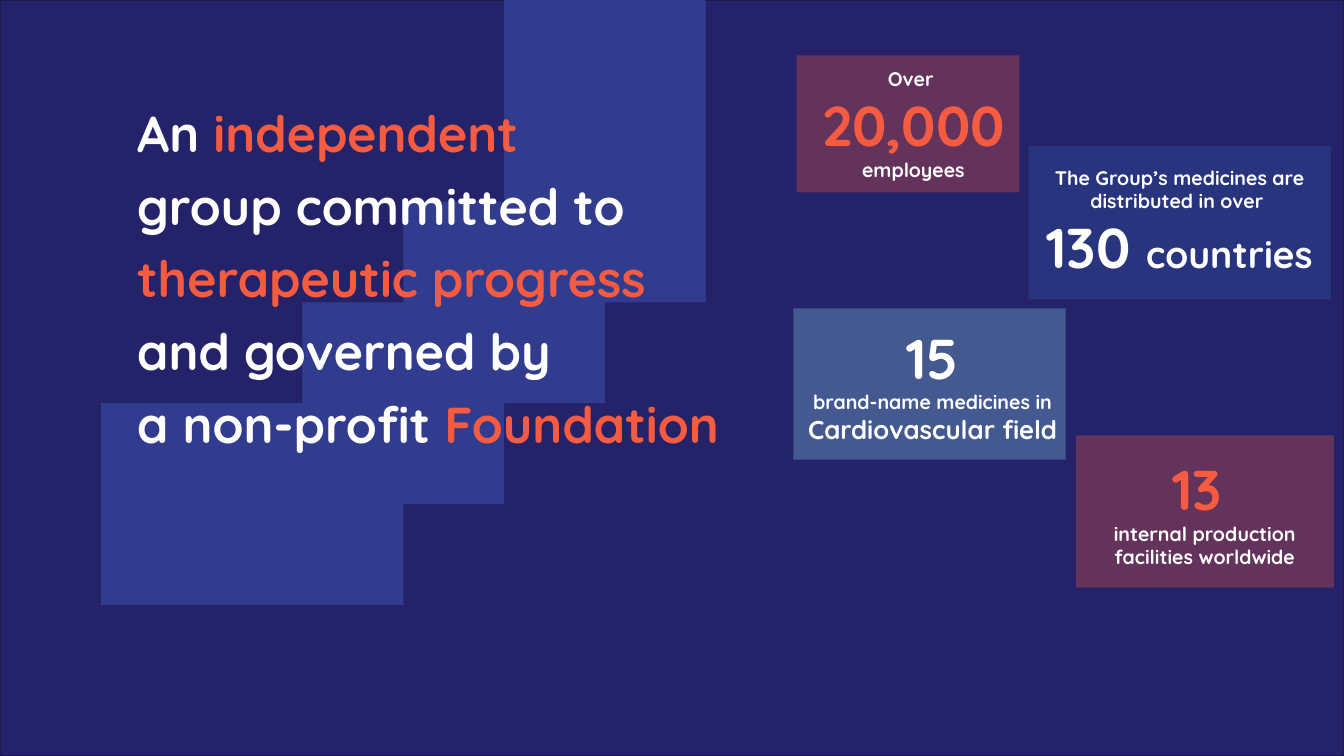
from copy import deepcopy

from lxml.etree import SubElement
from pptx import Presentation
from pptx.dml.color import RGBColor
from pptx.enum.shapes import MSO_SHAPE as Preset
from pptx.enum.text import MSO_ANCHOR as Anchor, MSO_AUTO_SIZE as AutoSize, PP_ALIGN as Align
from pptx.oxml.ns import qn
from pptx.util import Inches, Pt

COLORS = {
    "navy": "242269", "edge": "1B194E", "arc": "323C8E", "white": "FFFFFF",
    "coral": "F55B41", "blue": "345FAF", "cyan": "91D9E8",
}


def bezier(start, control_a, control_b, end, steps=48):
    """Points along a cubic curve, without its start."""
    points = []
    for step in range(1, steps + 1):
        t = step / steps
        weights = ((1 - t) ** 3, 3 * t * (1 - t) ** 2, 3 * t * t * (1 - t), t ** 3)
        corners = list(zip(start, control_a, control_b, end))
        points.append(tuple(sum(w * c for w, c in zip(weights, axis)) for axis in corners))
    return points


class SlideBuilder:
    font = {"name": "Quicksand", "bold": True}

    def __init__(self, presentation):
        self.slide = presentation.slides.add_slide(presentation.slide_layouts[6])
        fill = self.slide.background.fill
        fill.solid()
        fill.fore_color.rgb = self.color("navy")

    def color(self, name):
        return RGBColor.from_string(COLORS[name])

    def paint(self, shape, fill, alpha=None, line=None):
        shape.shadow.inherit = False
        shape.fill.solid()
        shape.fill.fore_color.rgb = self.color(fill)
        if alpha:
            color = shape._element.spPr.find(qn("a:solidFill"))[0]
            SubElement(color, qn("a:alpha")).set("val", str(alpha * 1000))
        if line:
            shape.line.color.rgb = self.color(line)
            shape.line.width = Pt(1)
        else:
            shape.line.fill.background()

    def rectangle(self, box, fill, **style):
        shape = self.slide.shapes.add_shape(Preset.RECTANGLE, *map(Inches, box))
        self.paint(shape, fill, **style)

    def outline(self, points, fill):
        builder = self.slide.shapes.build_freeform(*points[0], scale=Inches(1))
        builder.add_line_segments(points[1:], close=True)
        self.paint(builder.convert_to_shape(), fill)

    def text(self, box, paragraphs, margins=(0, 0), line_spacing=None,
             align=Align.CENTER, **frame_format):
        """Each paragraph is a list of (text, size, color) runs."""
        frame = self.slide.shapes.add_textbox(*map(Inches, box)).text_frame
        side, end = map(Inches, margins)
        values = {
            "word_wrap": True, "margin_left": side, "margin_right": side,
            "margin_top": end, "margin_bottom": end, **frame_format,
        }
        for name, value in values.items():
            setattr(frame, name, value)
        for index, runs in enumerate(paragraphs):
            paragraph = frame.add_paragraph() if index else frame.paragraphs[0]
            paragraph.alignment = align
            paragraph.line_spacing = line_spacing
            for run in runs:
                self.add_run(paragraph, *run)

    def add_run(self, paragraph, text, size, color):
        for index, part in enumerate(text.split("\n")):
            if index:
                # The break keeps the format of the run before it
                paragraph.add_line_break()
                paragraph._p[-1].append(deepcopy(run._r.rPr))
            if part:
                run = paragraph.add_run()
                run.text = part
                for name, value in {**self.font, "size": Pt(size)}.items():
                    setattr(run.font, name, value)
                run.font.color.rgb = self.color(color)

    def card(self, box, fill, text_box, paragraphs, **text_format):
        self.rectangle(box, fill, alpha=30)
        values = {"vertical_anchor": Anchor.MIDDLE, **text_format}
        self.text(text_box, paragraphs, auto_size=AutoSize.SHAPE_TO_FIT_TEXT, **values)


def main():
    presentation = Presentation()
    presentation.slide_width, presentation.slide_height = Inches(13.33), Inches(7.5)
    builder = SlideBuilder(presentation)

    # Background and arc
    builder.rectangle((0, 0, 13.33, 7.5), "navy", line="edge")
    outer = [(7.35, 0.06), (7.35, 3.33), (4.7, 5.97), (1.44, 5.97)]
    inner = [(1.44, 3.83), (3.52, 3.83), (5.21, 2.14), (5.21, 0.06)]
    builder.outline(
        [(5.2, 0), (7.35, 0), outer[0], *bezier(*outer),
         (1.34, 5.97), (1.34, 3.83), inner[0], *bezier(*inner)], "arc")

    # Headline
    headline = [
        ("An ", "white"), ("independent\n", "coral"),
        ("group committed to ", "white"), ("therapeutic progress \n", "coral"),
        ("and governed by \na non-profit ", "white"), ("Foundation", "coral"),
    ]
    builder.text((1.36, 0.89, 6.89, 3.79), [[(text, 36, color) for text, color in headline]],
                 line_spacing=Pt(52), align=Align.LEFT, vertical_anchor=Anchor.TOP)

    # Key figures
    builder.card((7.9, 0.55, 2.21, 1.36), "coral", (7.86, 0.66, 2.4, 1.14), [
        [("Over \n", 14, "white"), ("20,000\n", 40, "coral"), ("employees", 14, "white")]])
    builder.card((10.2, 1.45, 3, 1.52), "blue", (10.29, 1.64, 2.82, 1.14), [
        [("The Group’s medicines are distributed in over \n", 14, "white"),
         ("130 ", 40, "white"), ("countries", 26.7, "white")]])
    builder.card((7.87, 3.06, 2.7, 1.5), "cyan", (7.97, 3.2, 2.56, 1.22), [
        [("15", 40, "white")],
        [("brand-name medicines in ", 14, "white"), ("Cardiovascular field", 18.5, "white")]])
    builder.card((10.67, 4.32, 2.56, 1.51), "coral", (10.67, 4.44, 2.56, 1.28), [
        [("13 ", 40, "coral")],
        [("internal production facilities worldwide", 14, "white")]],
        margins=(0.13, 0.07), vertical_anchor=Anchor.TOP)

    presentation.save("out.pptx")


if __name__ == "__main__":
    main()
